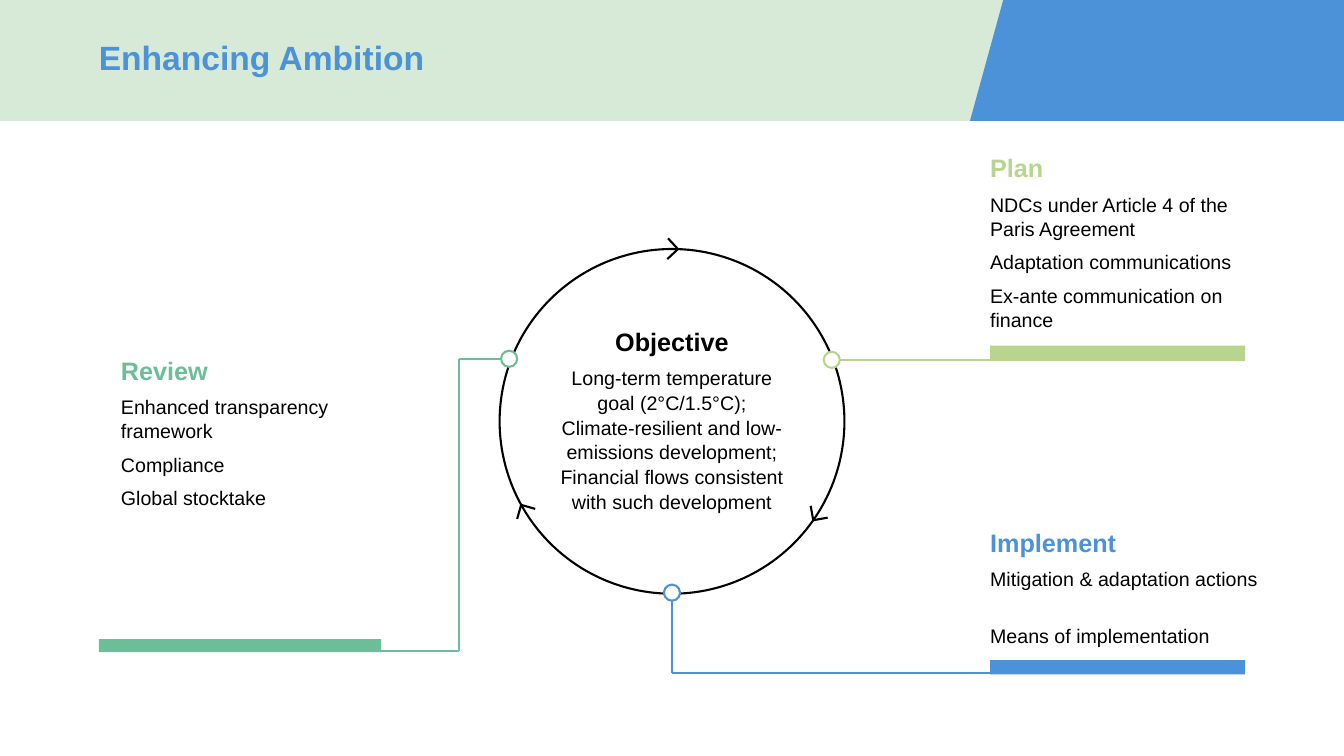
from itertools import pairwise
from math import cos, radians, sin

from lxml import etree
from pptx import Presentation
from pptx.dml.color import RGBColor
from pptx.enum.shapes import MSO_CONNECTOR, MSO_SHAPE
from pptx.enum.text import MSO_ANCHOR, PP_ALIGN
from pptx.oxml.ns import qn
from pptx.util import Inches, Pt

COLORS = {"band": "D7EAD7", "blue": "4B92D8", "lime": "B8D590",
          "teal": "6CBE99", "ink": "000000", "paper": "FFFFFF"}
RGB = {name: RGBColor.from_string(code) for name, code in COLORS.items()}
WIDTH, HEIGHT = 13.33, 7.5
BAND_HEIGHT = 1.2
LEFT_EDGE, RIGHT_COLUMN, RIGHT_EDGE = 0.98, 9.82, 12.35
CENTER_X, CENTER_Y, RADIUS = WIDTH / 2, 4.18, 1.71
MARKER = 0.16
WING = 0.145

prs = Presentation()
prs.slide_width, prs.slide_height = Inches(WIDTH), Inches(HEIGHT)
slide = prs.slides.add_slide(prs.slide_layouts[5])
shapes = slide.shapes


def paint(shape, fill=None, line=None):
    """Give a shape a flat fill and a 1.5 pt outline, or neither."""
    shape.shadow.inherit = False
    if fill:
        shape.fill.solid()
        shape.fill.fore_color.rgb = RGB[fill]
    else:
        shape.fill.background()
    if line:
        shape.line.color.rgb = RGB[line]
        shape.line.width = Pt(1.5)
    else:
        shape.line.fill.background()


def write_block(box, heading, color, lines, align=PP_ALIGN.LEFT, gap=0):
    """Write a bold heading over 14 pt lines; gap is extra space between the lines."""
    block = shapes.add_textbox(*map(Inches, box)).text_frame
    block.word_wrap = True
    block.vertical_anchor = MSO_ANCHOR.BOTTOM
    block.margin_left = block.margin_top = block.margin_right = 0
    block.margin_bottom = Inches(0.05)
    for i, text in enumerate([heading, *lines]):
        para = block.paragraphs[0] if i == 0 else block.add_paragraph()
        para.text = text
        para.alignment = align
        para.line_spacing = 1.05
        para.space_after = Pt(6)
        if i > 1 and gap:
            para.space_before = Pt(gap)
        para.font.name = "Arial"
        para.font.size = Pt(14 if i else 18)
        para.font.bold = i == 0
        para.font.color.rgb = RGB["ink" if i else color]


# Header
band = shapes.add_shape(MSO_SHAPE.RECTANGLE, 0, 0, Inches(WIDTH), Inches(BAND_HEIGHT))
paint(band, fill="band")
corner = shapes.build_freeform(Inches(9.95), 0)
corner.add_line_segments([(Inches(x), Inches(y)) for x, y in
                          [(WIDTH, 0), (WIDTH, BAND_HEIGHT), (9.62, BAND_HEIGHT)]])
paint(corner.convert_to_shape(), fill="blue")

title = shapes.title
title.element.getparent().append(title.element)
title.left, title.top, title.width, title.height = map(Inches, (LEFT_EDGE, 0.29, 7.85, 0.61))
heading = title.text_frame
heading.text = "Enhancing Ambition"
heading.vertical_anchor = MSO_ANCHOR.MIDDLE
heading.margin_left = heading.margin_top = heading.margin_right = heading.margin_bottom = 0
title_line = heading.paragraphs[0]
title_line.alignment = PP_ALIGN.LEFT
title_line.line_spacing = 0.9
title_line.font.name = "Arial"
title_line.font.size = Pt(24)
title_line.font.bold = True
title_line.font.color.rgb = RGB["blue"]

# Cycle, with arrowheads that point clockwise along it
cycle = shapes.add_shape(MSO_SHAPE.OVAL, Inches(CENTER_X - RADIUS), Inches(CENTER_Y - RADIUS),
                         Inches(2 * RADIUS), Inches(2 * RADIUS))
paint(cycle, line="ink")
for angle in (-88, 35, 151):
    tip_x = CENTER_X + RADIUS * cos(radians(angle))
    tip_y = CENTER_Y + RADIUS * sin(radians(angle))
    wing_1, wing_2 = [(Inches(tip_x + WING * cos(radians(angle + turn))),
                       Inches(tip_y + WING * sin(radians(angle + turn))))
                      for turn in (-45, -135)]
    arrowhead = shapes.build_freeform(*wing_1)
    arrowhead.add_line_segments([(Inches(tip_x), Inches(tip_y)), wing_2], close=False)
    paint(arrowhead.convert_to_shape(), line="ink")

write_block((5.53, 3.29, 2.27, 1.85), "Objective", "ink",
            ["Long-term temperature goal (2°C/1.5°C);\vClimate-resilient and low-emissions "
             "development; Financial flows consistent with such development"],
            PP_ALIGN.CENTER)

# Stages: text box, lines, extra gap, bar, route from the cycle to the bar
stages = [
    ("Plan", "lime", (RIGHT_COLUMN, 1.56, 2.56, 1.78),
     ["NDCs under Article 4 of the Paris Agreement", "Adaptation communications",
      "Ex-ante communication on finance"], 0,
     (RIGHT_COLUMN, 3.43, RIGHT_EDGE - RIGHT_COLUMN, 0.14),
     [(8.25, 3.57), (RIGHT_EDGE, 3.57)]),
    ("Implement", "blue", (RIGHT_COLUMN, 5.24, 2.68, 1.23),
     ["Mitigation & adaptation actions", "Means of implementation"], 17,
     (RIGHT_COLUMN, 6.55, RIGHT_EDGE - RIGHT_COLUMN, 0.14),
     [(CENTER_X, 5.88), (CENTER_X, 6.68), (RIGHT_EDGE, 6.68)]),
    ("Review", "teal", (1.2, 3.55, 2.96, 1.55),
     ["Enhanced transparency framework", "Compliance", "Global stocktake"], 0,
     (LEFT_EDGE, 6.34, 2.8, 0.13),
     [(5.05, 3.56), (4.55, 3.56), (4.55, 6.46), (LEFT_EDGE, 6.46)]),
]
for name, color, box, lines, gap, bar_box, route in stages:
    write_block(box, name, color, lines, gap=gap)
    bar = shapes.add_shape(MSO_SHAPE.RECTANGLE, *map(Inches, bar_box))
    paint(bar, fill=color)
    for start, end in pairwise(route):
        link = shapes.add_connector(MSO_CONNECTOR.STRAIGHT, *map(Inches, start + end))
        link.line.color.rgb = RGB[color]
        link.line.width = Pt(1.5)
        etree.SubElement(link.element.spPr, qn("a:effectLst"))
    x, y = route[0]
    marker = shapes.add_shape(MSO_SHAPE.OVAL, Inches(x - MARKER / 2), Inches(y - MARKER / 2),
                              Inches(MARKER), Inches(MARKER))
    paint(marker, fill="paper", line=color)

prs.save("out.pptx")
